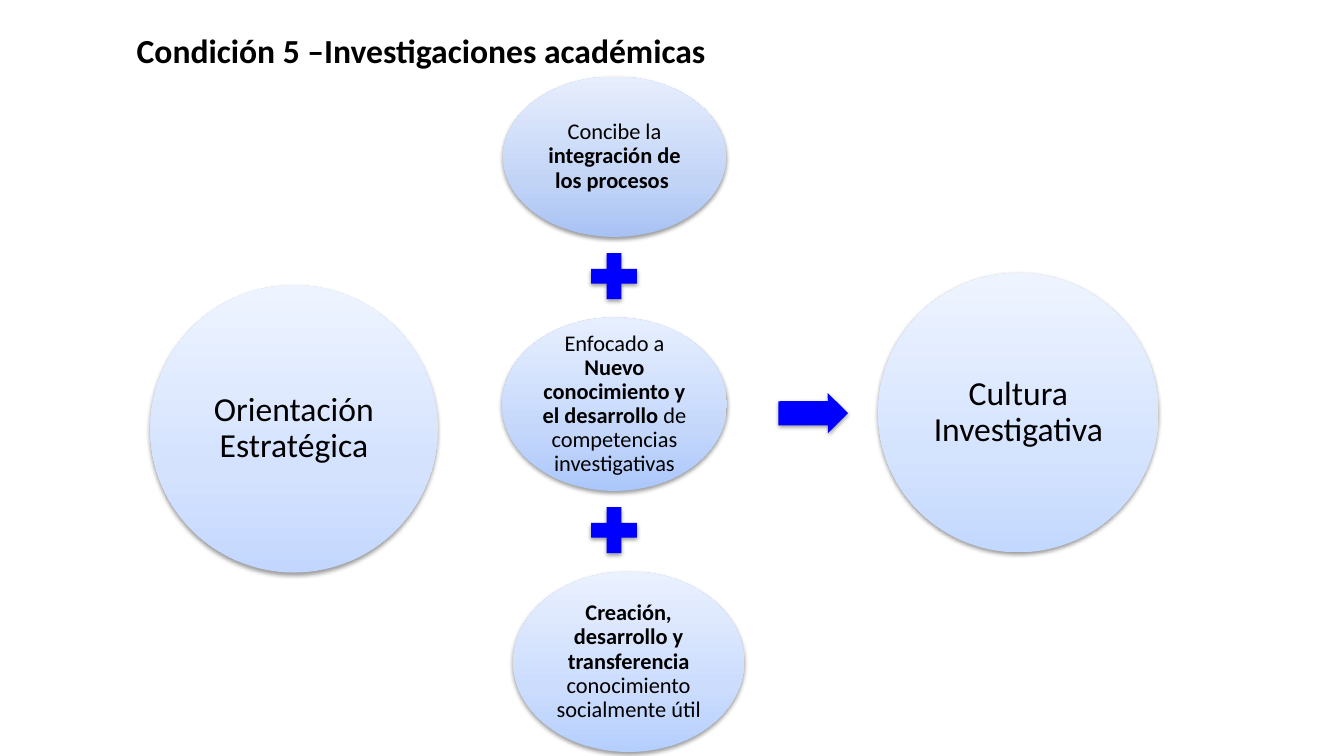
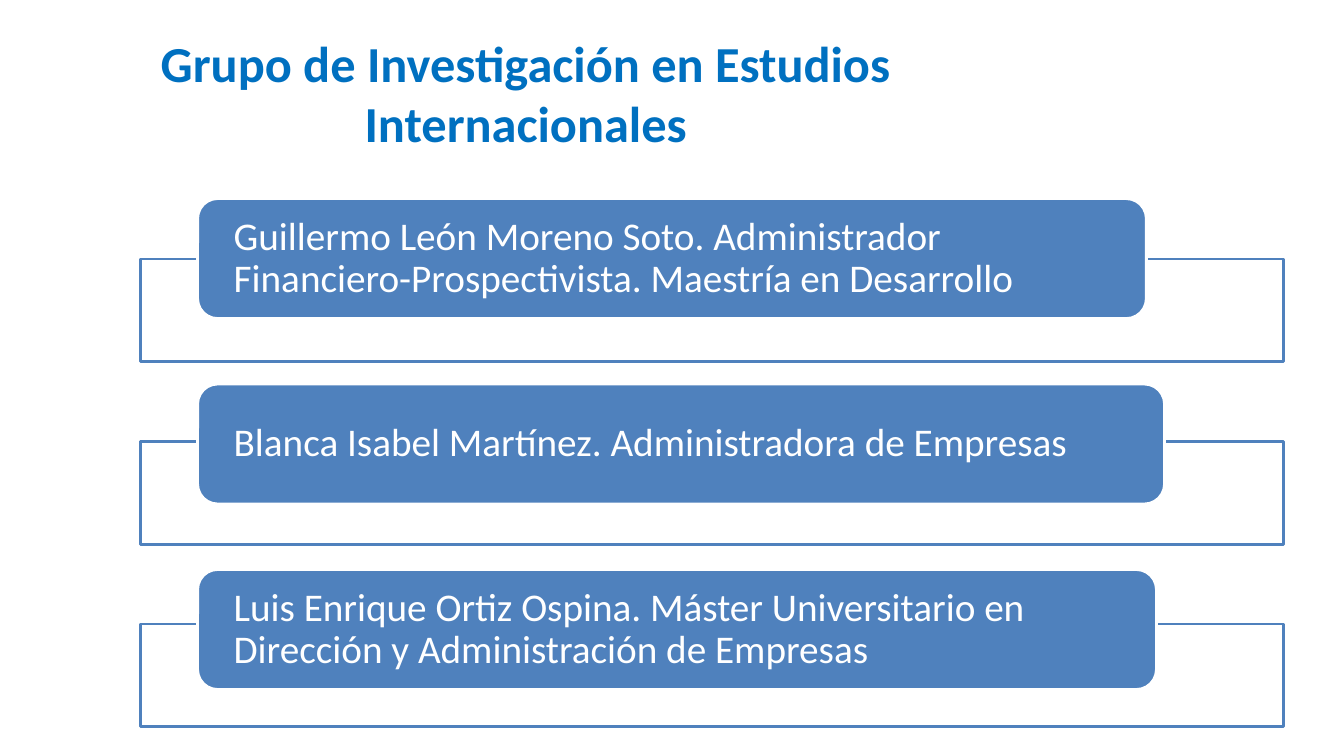
import copy
import dataclasses

import lxml.etree
import pptx
import pptx.dml.color
import pptx.enum.shapes
import pptx.enum.text
import pptx.oxml.ns
import pptx.util

Inches = pptx.util.Inches
Preset = pptx.enum.shapes.MSO_SHAPE
Align = pptx.enum.text.PP_ALIGN
Anchor = pptx.enum.text.MSO_ANCHOR
AutoSize = pptx.enum.text.MSO_AUTO_SIZE
qn = pptx.oxml.ns.qn


@dataclasses.dataclass(frozen=True)
class Theme:
    font: str = "Calibri"
    black: str = "000000"
    white: str = "FFFFFF"
    heading: str = "0070C0"
    accent: str = "4F81BD"
    symbol: str = "0000FF"
    title_size: int = 36
    card_size: int = 28
    large_size: int = 24
    small_size: int = 16
    line_width: int = 2
    line_spacing: float = 0.9
    gradient_positions: tuple = (0, 0.35, 1)


def color(value):
    return pptx.dml.color.RGBColor.from_string(value)


class Slides:
    def __init__(self, theme):
        self.theme = theme
        self.deck = pptx.Presentation()
        self.deck.slide_width = Inches(13.33)
        self.deck.slide_height = Inches(7.5)
        self.page = None

    def new_page(self):
        self.page = self.deck.slides.add_slide(self.deck.slide_layouts[5])

    def add_text(self, box, runs, size, ink, align, spacing=None):
        frame = box.text_frame
        frame.word_wrap = True
        frame.vertical_anchor = Anchor.MIDDLE
        para = frame.paragraphs[0]
        para.alignment = align
        if spacing:
            para.line_spacing = spacing
        for text, bold in runs:
            span = para.add_run()
            span.text = text
            span.font.name = self.theme.font
            span.font.size = pptx.util.Pt(size)
            span.font.bold = bold
            span.font.color.rgb = color(ink)

    def title(self, text, place, size, ink, align, auto_size):
        box = self.page.shapes.title
        box.left, box.top, box.width, box.height = map(Inches, place)
        self.add_text(box, [(text, True)], size, ink, align)
        box.text_frame.auto_size = auto_size

    def shape(self, preset, place, fill=None, line=None):
        box = self.page.shapes.add_shape(preset, *map(Inches, place))
        box.shadow.inherit = False
        if fill:
            box.fill.solid()
            box.fill.fore_color.rgb = color(fill)
        if line:
            box.line.color.rgb = color(line)
            box.line.width = pptx.util.Pt(self.theme.line_width)
        else:
            box.line.fill.background()
        return box

    def soft_shadow(self, box):
        effects = box._element.spPr.find(qn("a:effectLst"))
        shadow = lxml.etree.SubElement(
            effects, qn("a:outerShdw"), blurRad=str(pptx.util.Pt(3.1)),
            dist=str(pptx.util.Pt(1.6)), dir="5400000", rotWithShape="0")
        ink = lxml.etree.SubElement(shadow, qn("a:srgbClr"), val=self.theme.black)
        lxml.etree.SubElement(ink, qn("a:alpha"), val="38000")

    def margins(self, box, horizontal, vertical):
        frame = box.text_frame
        frame.margin_left = frame.margin_right = Inches(horizontal)
        frame.margin_top = frame.margin_bottom = Inches(vertical)

    def bubble(self, place, shades, runs, size, margin):
        box = self.shape(Preset.OVAL, place)
        box.fill.gradient()
        box.fill.gradient_angle = 90
        stops = box._element.spPr.find(".//" + qn("a:gsLst"))
        stops.append(copy.deepcopy(stops[0]))
        for stop, position, shade in zip(
                box.fill.gradient_stops, self.theme.gradient_positions, shades):
            stop.position = position
            stop.color.rgb = color(shade)
        self.soft_shadow(box)
        self.margins(box, margin, margin)
        self.add_text(box, runs, size, self.theme.black, Align.CENTER,
                      self.theme.line_spacing)

    def symbol(self, preset, place):
        box = self.shape(preset, place, self.theme.symbol)
        self.soft_shadow(box)
        return box

    def card(self, text, place):
        box = self.shape(Preset.ROUNDED_RECTANGLE, place, self.theme.accent,
                         self.theme.white)
        self.margins(box, 0.3, 0)
        self.add_text(box, [(text, False)], self.theme.card_size,
                      self.theme.white, Align.LEFT, self.theme.line_spacing)


def build_research(slides):
    theme = slides.theme
    slides.new_page()
    slides.title("Condición 5 –Investigaciones académicas", (1.08, 0.25, 6.02, 0.5),
                 theme.large_size, theme.black, Align.RIGHT,
                 AutoSize.SHAPE_TO_FIT_TEXT)
    processes = (
        ((4.99, 0.76, 2.21, 1.59), ("A8C2F4", "C2D4F6", "E7EEFD"),
         (("Concibe la ", False), ("integración de los procesos ", True))),
        ((4.98, 3.15, 2.23, 1.72), ("ABC7FB", "C4D7FB", "E7EFFF"),
         (("Enfocado a ", False), ("Nuevo conocimiento y el desarrollo ", True),
          ("de competencias investigativas", False))),
        ((5.09, 5.67, 2.29, 1.79), ("B5CFFD", "CBDCFD", "EAF1FF"),
         (("Creación, desarrollo y transferencia ", True),
          ("conocimiento socialmente útil", False))),
    )
    for place, shades, runs in processes:
        slides.bubble(place, shades, runs, theme.small_size, 0.02)
    for top in (2.43, 4.95):
        slides.symbol(Preset.MATH_PLUS, (5.78, top, 0.62, 0.62))

    arrow = slides.symbol(Preset.RIGHT_ARROW, (7.72, 3.9, 0.69, 0.4))
    arrow.adjustments[0] = 0.6
    arrow.adjustments[1] = 0.5
    arrow.rotation = 359.8

    slides.bubble((8.71, 2.71, 2.78, 2.77), ("C3D8FE", "D4E3FE", "EEF4FF"),
                  [("Cultura Investigativa", False)], theme.large_size, 0.03)
    slides.bubble((1.49, 2.83, 2.85, 2.85), ("C3D7FE", "D4E2FE", "EEF4FF"),
                  [("Orientación Estratégica", False)], theme.large_size, 0.04)


def build_group(slides):
    theme = slides.theme
    slides.new_page()
    slides.title("Grupo de Investigación en Estudios Internacionales",
                 (1.15, 0.29, 8.13, 1.25), theme.title_size, theme.heading,
                 Align.CENTER, AutoSize.NONE)
    members = (
        ("Guillermo León Moreno Soto. Administrador Financiero-Prospectivista. "
         "Maestría en Desarrollo", 9.41),
        ("Blanca Isabel Martínez. Administradora de Empresas", 9.59),
        ("Luis Enrique Ortiz Ospina. Máster Universitario en Dirección y "
         "Administración de Empresas", 9.51),
    )
    for row, (text, width) in enumerate(members):
        slides.shape(Preset.RECTANGLE, (1.39, 2.57 + 1.81 * row, 11.34, 1.02),
                     theme.white, theme.accent)
        slides.card(text, (1.96, 1.97 + 1.84 * row, width, 1.19))


def main():
    slides = Slides(Theme())
    build_research(slides)
    build_group(slides)
    slides.deck.save("out.pptx")


if __name__ == "__main__":
    main()
